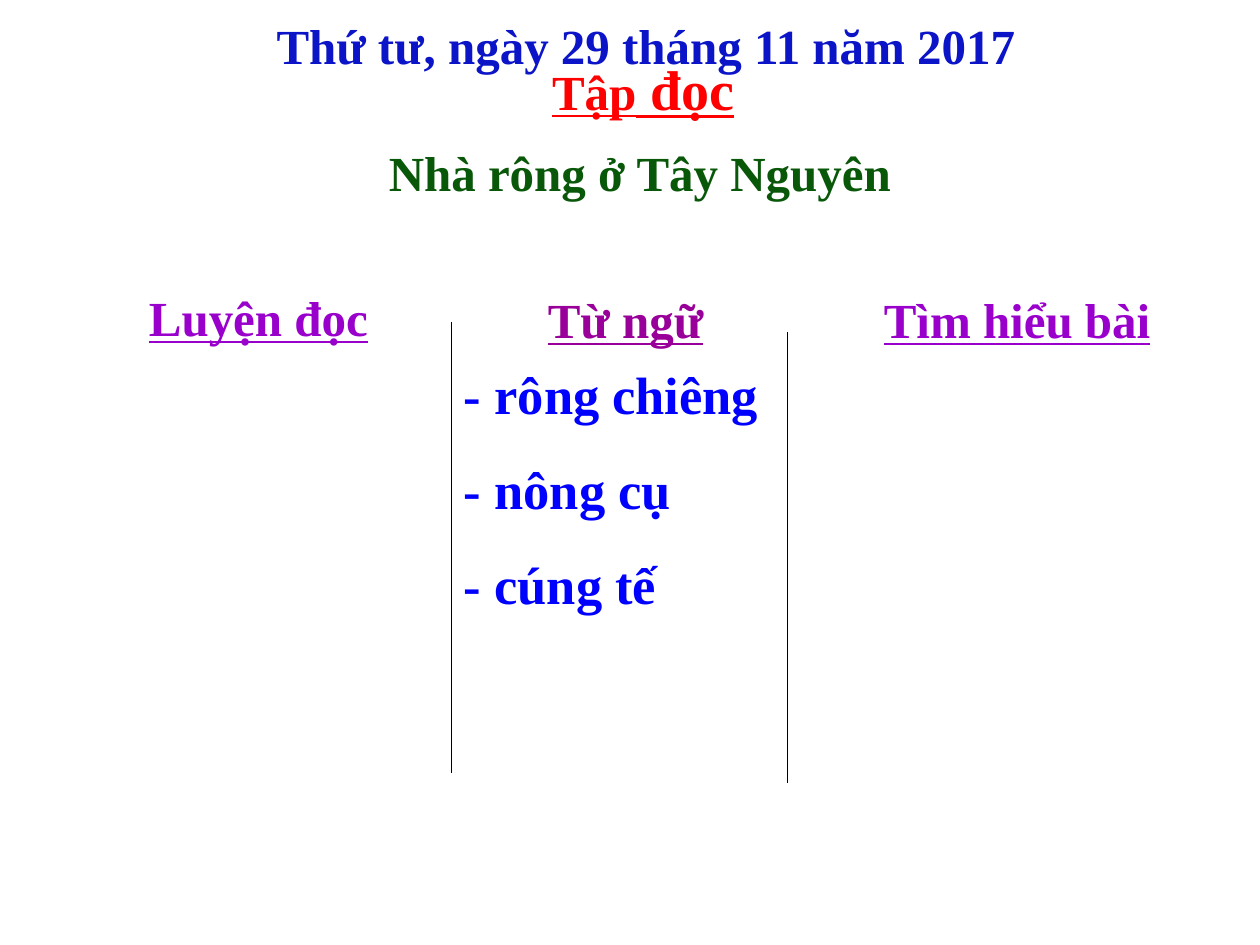
from dataclasses import dataclass
from typing import Optional

from lxml import etree
from pptx import Presentation
from pptx import util as u
from pptx.dml.color import RGBColor
from pptx.enum import shapes, text
from pptx.oxml.ns import qn

CELL = u.Inches(1) / 12  # the slide is a grid of 120 columns by 90 rows
COLUMNS, ROWS = 120, 90


@dataclass(frozen=True)
class Theme:
    font: str = "Times New Roman"
    date: str = "0B14C7"
    subject: str = "FF0000"
    lesson: str = "095709"
    heading: str = "9900CC"
    middle_heading: str = "990099"
    word: str = "0000FF"
    rule: str = "000000"
    paper: str = "FFFFFF"
    title_size: int = 28
    word_size: int = 30
    subject_size: int = 32
    rule_width: float = 0.75


THEME = Theme()


@dataclass(frozen=True)
class Piece:
    text: str
    size: int = THEME.title_size


@dataclass(frozen=True)
class Label:
    pieces: tuple[Piece, ...]
    column: float
    row: float
    columns: float
    rows: float
    color: str
    underline: bool = False
    centered: bool = False
    indent: float = 0
    fill: Optional[str] = None
    outlined: bool = True


@dataclass(frozen=True)
class Divider:
    column: float
    row: float
    rows: float = 42.95


VOCABULARY = (("- rông chiêng", 34, 13.2), ("- nông cụ", 28, 13.2), ("- cúng tế", 33, 7.2))
WORD_TOP, WORD_STEP = 33.9, 9.06

DIVIDERS = (Divider(43, 30.7), Divider(75, 31.65))
HEADINGS = (
    Label((Piece("Luyện đọc"),), 13, 26.8, 32, 7, THEME.heading, underline=True,
          outlined=False),
    Label((Piece("Tìm hiểu bài"),), 83, 27, 35, 12.5, THEME.heading, underline=True),
    Label((Piece("Từ ngữ"),), 51, 27, 27, 6.85, THEME.middle_heading, underline=True),
)
WORDS = tuple(
    Label((Piece(word, THEME.word_size),), 43, WORD_TOP + index * WORD_STEP,
          columns, rows, THEME.word)
    for index, (word, columns, rows) in enumerate(VOCABULARY)
)
TITLES = (
    Label((Piece("Thứ tư, ngày 29 tháng 11 năm 2017"),), 3, 0.87, 117, 15,
          THEME.date, centered=True),
    Label((Piece("Tập"), Piece(" đọc", THEME.subject_size)), 51.4, 4.6, 24.5, 7.7,
          THEME.subject, underline=True),
    Label((Piece("Nhà rông ở Tây Nguyên"),), 33.5, 13, 53, 12.5,
          THEME.lesson, indent=2.33, fill=THEME.paper),
)


def grid(cells: float) -> u.Emu:
    return u.Emu(round(cells * CELL))


def add_panel(slide, label: Label):
    """Add the four-sided outline, without line or shadow, that holds a label."""
    left, top = grid(label.column), grid(label.row)
    right, bottom = left + grid(label.columns), top + grid(label.rows)
    builder = slide.shapes.build_freeform(left, top)
    builder.add_line_segments(((right, top), (right, bottom), (left, bottom)), close=True)
    shape = builder.convert_to_shape()
    shape.shadow.inherit = False
    shape.line.fill.background()
    if label.fill:
        shape.fill.solid()
        shape.fill.fore_color.rgb = RGBColor.from_string(label.fill)
    else:
        shape.fill.background()
    return shape


def draw_label(slide, label: Label) -> None:
    if label.outlined:
        shape = add_panel(slide, label)
    else:
        shape = slide.shapes.add_textbox(
            grid(label.column), grid(label.row), grid(label.columns), grid(label.rows))
    frame = shape.text_frame
    frame.word_wrap = True
    frame.vertical_anchor = text.MSO_ANCHOR.TOP
    frame.margin_left = u.Inches(0.1) + grid(label.indent)
    paragraph = frame.paragraphs[0]
    paragraph.alignment = text.PP_ALIGN.CENTER if label.centered else text.PP_ALIGN.LEFT
    for piece in label.pieces:
        run = paragraph.add_run()
        run.text = piece.text
        font = run.font
        font.name = THEME.font
        font.size = u.Pt(piece.size)
        font.bold = True
        font.underline = label.underline
        font.color.rgb = RGBColor.from_string(label.color)


def draw_divider(slide, divider: Divider) -> None:
    connector = slide.shapes.add_connector(
        shapes.MSO_CONNECTOR.STRAIGHT,
        grid(divider.column), grid(divider.row),
        grid(divider.column), grid(divider.row + divider.rows))
    connector.line.color.rgb = RGBColor.from_string(THEME.rule)
    connector.line.width = u.Pt(THEME.rule_width)
    etree.SubElement(connector._element.spPr, qn("a:effectLst"))


def main() -> None:
    presentation = Presentation()
    presentation.slide_width = grid(COLUMNS)
    presentation.slide_height = grid(ROWS)
    slide = presentation.slides.add_slide(presentation.slide_layouts[6])
    for divider in DIVIDERS:
        draw_divider(slide, divider)
    for label in HEADINGS + WORDS + TITLES:
        draw_label(slide, label)
    presentation.save("out.pptx")


if __name__ == "__main__":
    main()
